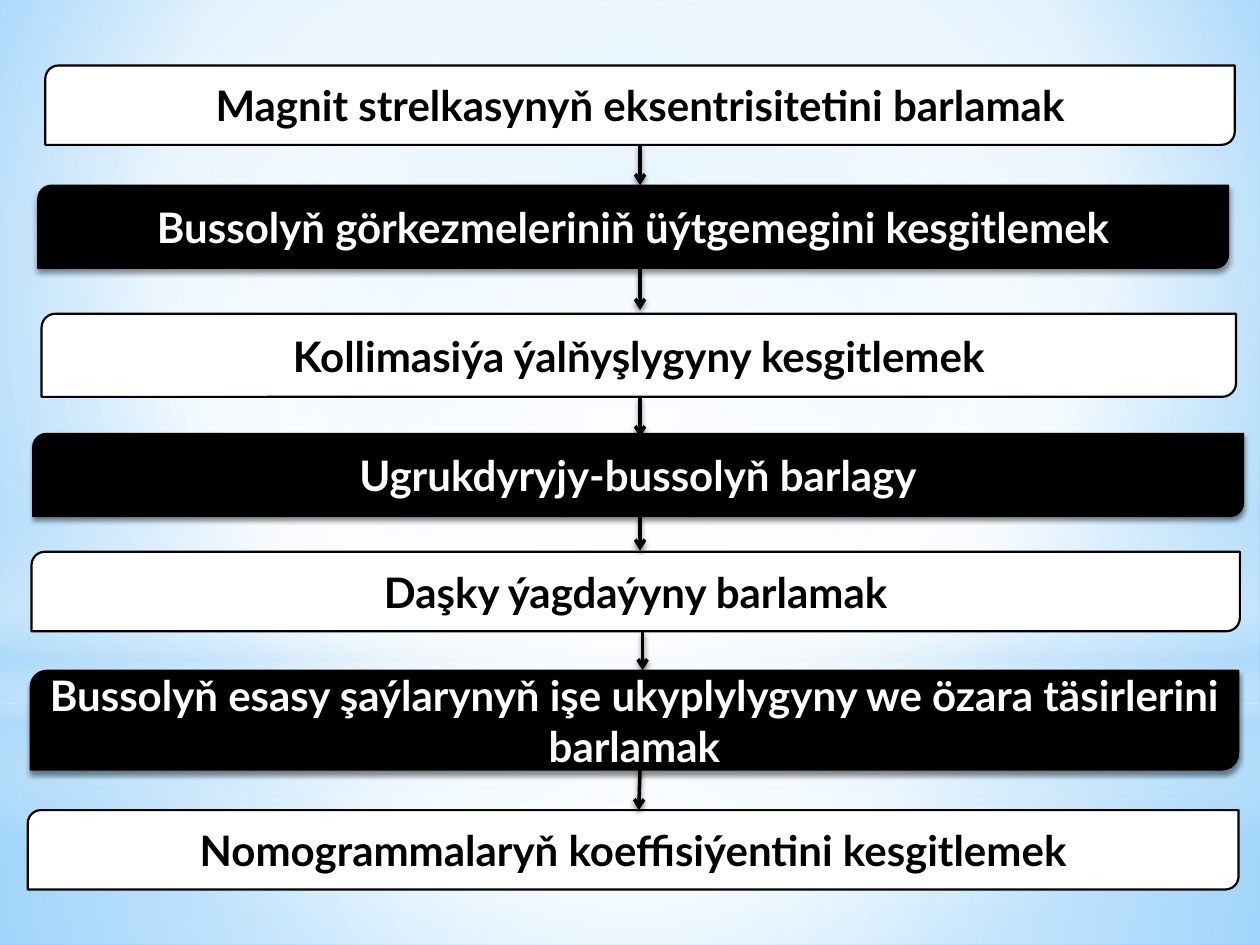
from dataclasses import dataclass

from lxml import etree
from pptx import Presentation
from pptx.dml.color import RGBColor
from pptx.enum.shapes import MSO_CONNECTOR, MSO_SHAPE
from pptx.enum.text import MSO_ANCHOR, PP_ALIGN
from pptx.oxml.ns import qn
from pptx.util import Inches, Pt

RECTANGLE = MSO_SHAPE.RECTANGLE
ELLIPSE = MSO_SHAPE.OVAL
STEP_SHAPE = MSO_SHAPE.ROUND_2_DIAG_RECTANGLE
STRAIGHT = MSO_CONNECTOR.STRAIGHT
CENTER = PP_ALIGN.CENTER
MIDDLE = MSO_ANCHOR.MIDDLE

# Slide grid: 100 columns by 75 rows
WIDTH, HEIGHT = Inches(10), Inches(7.5)
COLUMNS, ROWS = 100, 75
BLACK, WHITE, SKY = "000000", "FFFFFF", "B4DCFA"
TEXT_FORMAT = {"name": "Lato", "size": Pt(24), "bold": True}


@dataclass
class Gradient:
    stops: list  # (position %, colour, opacity %)
    center: tuple = (50, 50, 50, 50)
    angle: int | None = None  # set for a linear gradient


@dataclass
class Panel:
    kind: int
    top: float
    height: float
    gradient: Gradient


@dataclass
class Step:
    text: str
    left: float
    top: float
    width: float
    height: float
    dark: bool


@dataclass
class Arrow:
    start: tuple
    end: tuple


BACKGROUND = Gradient([(0, "9ED5FF", 100), (60, WHITE, 100), (100, "5BB9FF", 100)],
                      center=(20, 10, 20, 60))
PANELS = [
    Panel(RECTANGLE, 55.8, 19.2, Gradient([(0, WHITE, 91), (37, WHITE, 76), (100, SKY, 79)])),
    Panel(RECTANGLE, 0, 55.8, Gradient([(0, WHITE, 89), (48, WHITE, 62), (100, SKY, 79)])),
    Panel(RECTANGLE, 41.2, 25, Gradient(
        [(0, WHITE, 0), (29, WHITE, 30), (45, SKY, 40),
         (55, WHITE, 26), (65, SKY, 60), (100, WHITE, 0)], angle=90)),
    Panel(ELLIPSE, 17.5, 55.8, Gradient([(0, WHITE, 100), (56, WHITE, 0)])),
]
STEPS = [
    Step("Magnit strelkasynyň eksentrisitetini barlamak", 3.6, 5.2, 94.4, 6.3, False),
    Step("Bussolyň görkezmeleriniň üýtgemegini kesgitlemek", 3, 14.7, 94.5, 6.6, True),
    Step("Kollimasiýa ýalňyşlygyny kesgitlemek", 3.3, 24.9, 94.8, 6.6, False),
    Step("Ugrukdyryjy-bussolyň barlagy", 2.6, 34.4, 96.1, 6.6, True),
    Step("Daşky ýagdaýyny barlamak", 2.5, 43.8, 95.9, 6.3, False),
    Step("Bussolyň esasy şaýlarynyň işe ukyplylygyny we özara täsirlerini barlamak",
         2.4, 53.2, 95.9, 7.9, True),
    Step("Nomogrammalaryň koeffisiýentini kesgitlemek", 2.2, 64.3, 96.1, 6.3, False),
]
ARROWS = [
    Arrow((50.8, 11.5), (50.8, 14.7)),
    Arrow((50.8, 21.2), (50.8, 24.6)),
    Arrow((50.8, 31.5), (50.8, 34.7)),
    Arrow((50.8, 40.9), (50.8, 43.7)),
    Arrow((51, 50.1), (51, 53.2)),
    Arrow((50.8, 61), (50.7, 64.3)),
]


def column(count: float) -> int:
    return round(WIDTH * count / COLUMNS)


def row(count: float) -> int:
    return round(HEIGHT * count / ROWS)


def color(value: str) -> RGBColor:
    return RGBColor.from_string(value)


def add_node(parent, tag: str, **attributes):
    return etree.SubElement(parent, qn(tag), {key: str(value) for key, value in attributes.items()})


def apply_gradient(fill, properties, gradient: Gradient) -> None:
    """Replace the default gradient with the given stops and direction."""
    fill.gradient()
    node = properties.find(qn("a:gradFill"))
    for child in list(node):
        node.remove(child)
    stop_list = add_node(node, "a:gsLst")
    for position, value, opacity in gradient.stops:
        stop = add_node(stop_list, "a:gs", pos=position * 1000)
        add_node(add_node(stop, "a:srgbClr", val=value), "a:alpha", val=opacity * 1000)
    if gradient.angle is not None:
        add_node(node, "a:lin", ang=gradient.angle * 60000, scaled=0)
    else:
        direction = add_node(node, "a:path", path="circle")
        add_node(direction, "a:fillToRect",
                 **{side: share * 1000 for side, share in zip("ltrb", gradient.center)})


def add_shadow(properties) -> None:
    effects = properties.find(qn("a:effectLst"))
    if effects is None:
        effects = add_node(properties, "a:effectLst")
    shadow = add_node(effects, "a:outerShdw", blurRad=Pt(3.1), dist=Pt(1.8),
                      dir=90 * 60000, rotWithShape=0)
    add_node(add_node(shadow, "a:srgbClr", val=BLACK), "a:alpha", val=45000)


def draw_panel(slide, panel: Panel) -> None:
    shape = slide.shapes.add_shape(panel.kind, 0, row(panel.top), WIDTH, row(panel.height))
    shape.shadow.inherit = False
    shape.line.fill.background()
    apply_gradient(shape.fill, shape.element.spPr, panel.gradient)


def draw_step(slide, step: Step) -> None:
    shape = slide.shapes.add_shape(STEP_SHAPE, column(step.left), row(step.top),
                                   column(step.width), row(step.height))
    shape.shadow.inherit = False
    shape.fill.solid()
    shape.fill.fore_color.rgb = color(BLACK if step.dark else WHITE)
    shape.line.color.rgb = color(BLACK)
    shape.line.width = Pt(0.75 if step.dark else 1.25)
    if step.dark:
        add_shadow(shape.element.spPr)
    frame = shape.text_frame
    frame.word_wrap = True
    frame.vertical_anchor = MIDDLE
    paragraph = frame.paragraphs[0]
    paragraph.alignment = CENTER
    run = paragraph.add_run()
    run.text = step.text
    for attribute, value in TEXT_FORMAT.items():
        setattr(run.font, attribute, value)
    run.font.color.rgb = color(WHITE if step.dark else BLACK)


def draw_arrow(slide, arrow: Arrow) -> None:
    (start_x, start_y), (end_x, end_y) = arrow.start, arrow.end
    connector = slide.shapes.add_connector(STRAIGHT, column(start_x), row(start_y),
                                           column(end_x), row(end_y))
    connector.line.color.rgb = color(BLACK)
    connector.line.width = Pt(2)
    properties = connector.element.spPr
    add_node(properties.find(qn("a:ln")), "a:tailEnd", type="arrow")
    add_shadow(properties)


def main() -> None:
    presentation = Presentation()
    presentation.slide_width, presentation.slide_height = WIDTH, HEIGHT
    slide = presentation.slides.add_slide(presentation.slide_layouts[6])

    # Background and its translucent panels
    fill = slide.background.fill
    fill.solid()
    apply_gradient(fill, slide.element.find(".//" + qn("p:bgPr")), BACKGROUND)
    for panel in PANELS:
        draw_panel(slide, panel)

    # Chain of checks
    for step in STEPS:
        draw_step(slide, step)
    for arrow in ARROWS:
        draw_arrow(slide, arrow)

    presentation.save("out.pptx")


if __name__ == "__main__":
    main()
